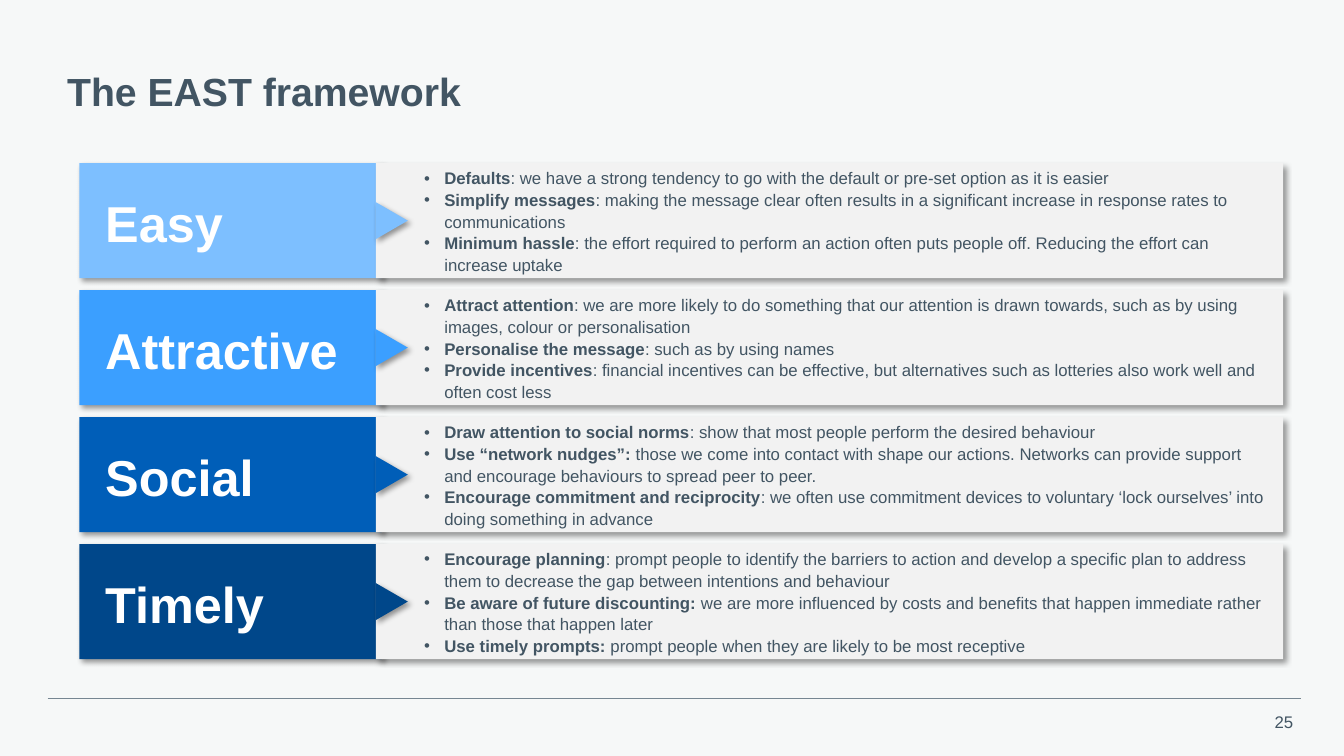
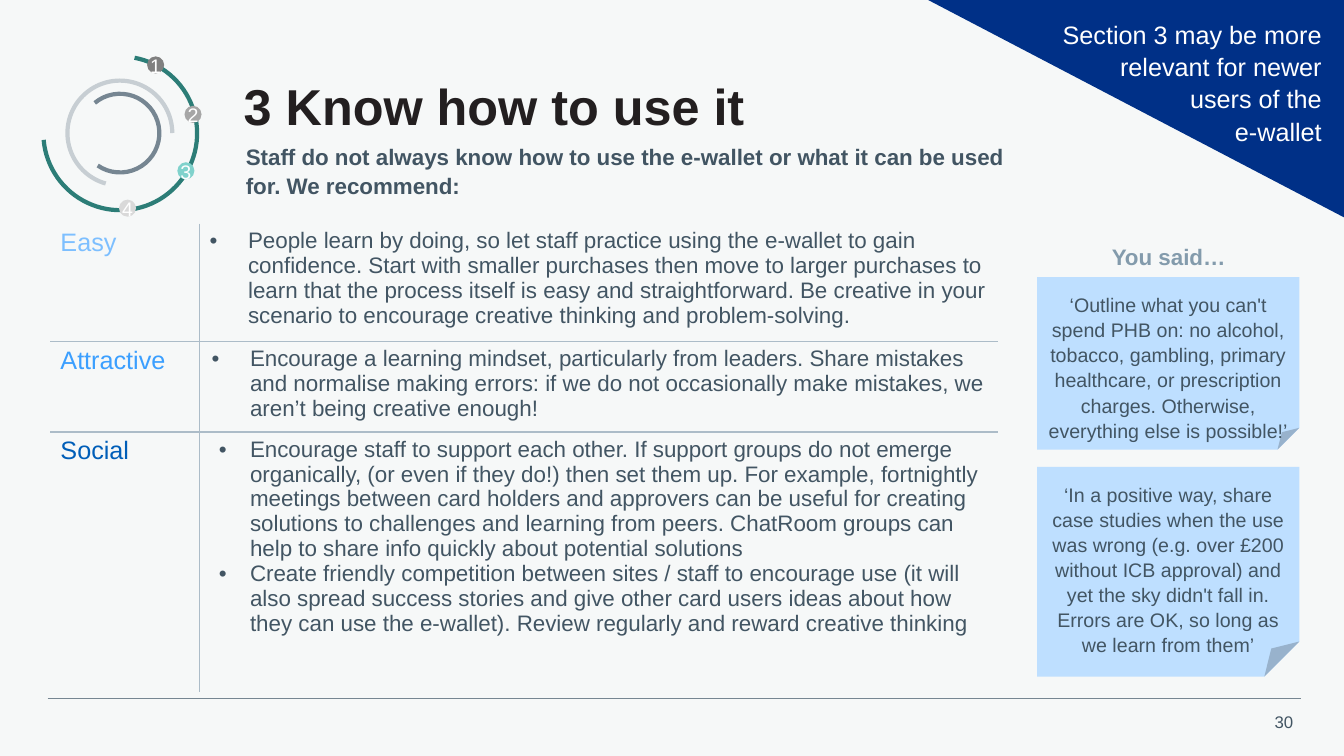
import pptx
import pptx.util
import pptx.dml.color
import pptx.enum.shapes
import pptx.enum.text
import pptx.oxml.ns
import lxml.etree

Pt = pptx.util.Pt
SHAPE = pptx.enum.shapes.MSO_SHAPE
ALIGN = pptx.enum.text.PP_ALIGN
ANCHOR = pptx.enum.text.MSO_ANCHOR
qn = pptx.oxml.ns.qn


class Theme:
    font = "Arial"
    page = "F6F8F8"
    ink = "425563"
    heading = "231F20"
    muted = "839BAC"
    rule = "768692"
    grid = "ACBCC8"
    panel = "F2F2F2"
    note = "BEDFFF"
    banner = "003087"
    white = "FFFFFF"
    east = {"Easy": "7DBFFF", "Attractive": "3B9FFF", "Social": "005EB8", "Timely": "00478A"}
    display, title, label, body, note_size, small = 36, 28, 18, 16, 14, 12
    leading = 1.07


FRAMEWORK = [
    ("Easy", [
        ("Defaults", ": we have a strong tendency to go with the default or pre-set option as it is easier"),
        ("Simplify messages", ": making the message clear often results in a significant increase in response rates to communications"),
        ("Minimum hassle", ": the effort required to perform an action often puts people off. Reducing the effort can increase uptake"),
    ]),
    ("Attractive", [
        ("Attract attention", ": we are more likely to do something that our attention is drawn towards, such as by using images, colour or personalisation"),
        ("Personalise the message", ": such as by using names"),
        ("Provide incentives", ": financial incentives can be effective, but alternatives such as lotteries also work well and often cost less"),
    ]),
    ("Social", [
        ("Draw attention to social norms", ": show that most people perform the desired behaviour"),
        ("Use “network nudges”: ", "those we come into contact with shape our actions. Networks can provide support and encourage behaviours to spread peer to peer."),
        ("Encourage commitment and reciprocity", ": we often use commitment devices to voluntary ‘lock ourselves’ into doing something in advance"),
    ]),
    ("Timely", [
        ("Encourage planning", ": prompt people to identify the barriers to action and develop a specific plan to address them to decrease the gap between intentions and behaviour"),
        ("Be aware of future discounting: ", "we are more influenced by costs and benefits that happen immediate rather than those that happen later"),
        ("Use timely prompts: ", "prompt people when they are likely to be most receptive"),
    ]),
]

ADVICE = [
    ("Easy", 84, (27.4, -27.4), [
        "People learn by doing, so let staff practice using the e-wallet to gain confidence. Start with smaller purchases then move to larger purchases to learn that the process itself is easy and straightforward. Be creative in your scenario to encourage creative thinking and problem-solving.",
    ]),
    ("Attractive", 64.5, (28.8, -27.4), [
        "Encourage a learning mindset, particularly from leaders. Share mistakes and normalise making errors: if we do not occasionally make mistakes, we aren’t being creative enough!",
    ]),
    ("Social", 185.5, (28.8, -22.3), [
        "Encourage staff to support each other. If support groups do not emerge organically, (or even if they do!) then set them up. For example, fortnightly meetings between card holders and approvers can be useful for creating solutions to challenges and learning from peers. ChatRoom groups can help to share info quickly about potential solutions",
        "Create friendly competition between sites / staff to encourage use (it will also spread success stories and give other card users ideas about how they can use the e-wallet). Review regularly and reward creative thinking",
    ]),
]

QUOTES = [
    (198, 123.1, 12600, "‘Outline what you can't spend PHB on: no alcohol, tobacco, gambling, primary healthcare, or prescription charges. Otherwise, everything else is possible!’"),
    (333.4, 149.8, 16667, "‘In a positive way, share case studies when the use was wrong (e.g. over £200 without ICB approval) and yet the sky didn't fall in. Errors are OK, so long as we learn from them’"),
]

BANNER = ["Section 3 may be more relevant for newer", "users of the", "e-wallet"]

DIAL_ARCS = [
    (48.2, 57.6, 74.9, 0, "C7CED3"),
    (57.6, 67, 56.2, 124.5, "768692"),
    (31, 40.3, 109.8, 175.1, "2C7D77"),
]
DIAL_STEPS = [
    (105.1, 40.3, "808080"),
    (131.8, 75.6, "A6A6A6"),
    (126.7, 115.9, "80D2CC"),
    (85, 142.6, "D9D9D9"),
]


def rgb(value):
    return pptx.dml.color.RGBColor.from_string(value)


def add_xml(parent, tag, **attributes):
    return lxml.etree.SubElement(parent, qn(tag), attributes)


def add_bullet(para, indent):
    properties = para._p.get_or_add_pPr()
    left, hanging = indent
    properties.set("marL", str(int(Pt(left))))
    properties.set("indent", str(int(Pt(hanging))))
    add_xml(properties, "a:buFont", typeface=Theme.font)
    add_xml(properties, "a:buChar", char="•")


def write(frame, lines, size, color=Theme.ink, bold=False, align=ALIGN.LEFT,
          indent=None, leading=Theme.leading):
    for index, line in enumerate(lines):
        para = frame.add_paragraph() if index else frame.paragraphs[0]
        para.alignment = align
        if leading:
            para.line_spacing = leading
        if indent:
            add_bullet(para, indent)
        spans = [(line, bold)] if isinstance(line, str) else [(line[0], True), (line[1], False)]
        for text, heavy in spans:
            span = para.add_run()
            span.text = text
            span.font.name = Theme.font
            span.font.size = Pt(size)
            span.font.bold = heavy
            span.font.color.rgb = rgb(color)


def add_text(page, at, lines, size, anchor=ANCHOR.TOP, margin=None, wrap=True, **style):
    box = page.shapes.add_textbox(*map(Pt, at))
    frame = box.text_frame
    frame.word_wrap = wrap
    frame.vertical_anchor = anchor
    if margin is not None:
        frame.margin_left = frame.margin_right = frame.margin_top = frame.margin_bottom = Pt(margin)
    write(frame, lines, size, **style)


def add_block(page, kind, at, fill, rotation=0, shadow=False):
    block = page.shapes.add_shape(kind, *map(Pt, at))
    block.rotation = rotation
    block.shadow.inherit = False
    block.fill.solid()
    block.fill.fore_color.rgb = rgb(fill)
    block.line.fill.background()
    if shadow:
        effects = block._element.spPr.find(qn("a:effectLst"))
        outer = add_xml(effects, "a:outerShdw", blurRad=str(Pt(4)), dist=str(Pt(3)),
                        dir="2700000", algn="tl", rotWithShape="0")
        add_xml(add_xml(outer, "a:srgbClr", val="000000"), "a:alpha", val="40000")
    return block


def new_page(deck, number):
    page = deck.slides.add_slide(deck.slide_layouts[6])
    page.background.fill.solid()
    page.background.fill.fore_color.rgb = rgb(Theme.page)
    add_text(page, (901.4, 504, 29.5, 21.6), [number], Theme.small, align=ALIGN.RIGHT, wrap=False)
    line = page.shapes.add_connector(pptx.enum.shapes.MSO_CONNECTOR.STRAIGHT,
                                     Pt(34), Pt(499), Pt(929.5), Pt(499))
    line.line.color.rgb = rgb(Theme.rule)
    line.line.width = Pt(0.5)
    add_xml(line._element.spPr, "a:effectLst")
    return page


def build_framework(deck):
    page = new_page(deck, "25")
    add_text(page, (48, 43.2, 690, 48.2), ["The EAST framework"], Theme.title,
             anchor=ANCHOR.MIDDLE, margin=0, bold=True, leading=0.9)
    top, pitch, height = 116.6, 90.7, 82.1
    arrow_width, arrow_height = 26.6, 23
    for row, (name, points) in enumerate(FRAMEWORK):
        y = top + row * pitch
        color = Theme.east[name]
        label = add_block(page, SHAPE.RECTANGLE, (56.7, y, 216, height), color, shadow=True)
        label.text_frame.margin_left = Pt(18.5)
        label.text_frame.vertical_anchor = ANCHOR.MIDDLE
        write(label.text_frame, [name], Theme.display, Theme.white, bold=True)
        panel = add_block(page, SHAPE.RECTANGLE, (268.5, y, 648, height), Theme.panel, shadow=True)
        panel.text_frame.vertical_anchor = ANCHOR.MIDDLE
        write(panel.text_frame, points, Theme.small, indent=(41.8, -14.4))
        add_block(page, SHAPE.ISOSCELES_TRIANGLE,
                  (266.5, y + (height - arrow_height) / 2, arrow_width, arrow_height),
                  color, rotation=90, shadow=True)


def set_borders(cell, sides):
    properties = cell._tc.get_or_add_tcPr()
    for index, side in enumerate(("L", "R", "T", "B")):
        visible = side in sides
        line = lxml.etree.Element(qn("a:ln" + side), {"w": str(Pt(1) if visible else 0)})
        if visible:
            add_xml(add_xml(line, "a:solidFill"), "a:srgbClr", val=Theme.grid)
        else:
            add_xml(line, "a:noFill")
        properties.insert(index, line)


def add_advice(page):
    columns = (106.6, 570.2)
    total = sum(height for _, height, _, _ in ADVICE)
    table = page.shapes.add_table(len(ADVICE), 2, Pt(36), Pt(159.8),
                                  Pt(sum(columns)), Pt(total)).table
    table.first_row = table.horz_banding = False
    for column, width in zip(table.columns, columns):
        column.width = Pt(width)
    for row, (name, height, indent, points) in enumerate(ADVICE):
        table.rows[row].height = Pt(height)
        label, advice = table.cell(row, 0), table.cell(row, 1)
        write(label.text_frame, [name], Theme.label, Theme.east[name], leading=None)
        write(advice.text_frame, points, Theme.body, indent=indent, leading=None)
        across = ("T" if row else "") + ("B" if row < len(ADVICE) - 1 else "")
        for cell, side in ((label, "R"), (advice, "L")):
            cell.fill.background()
            set_borders(cell, side + across)


def add_dial(page):
    for x, y, size, rotation, color in DIAL_ARCS:
        arc = add_block(page, SHAPE.ARC, (x, y, size, size), color, rotation)
        arc.fill.background()
        arc.adjustments[0] = 63.376
        arc.adjustments[1] = 0
        arc.line.color.rgb = rgb(color)
        arc.line.width = Pt(3)
    for number, (x, y, color) in enumerate(DIAL_STEPS, 1):
        step = add_block(page, SHAPE.OVAL, (x, y, 12.2, 12.2), color)
        frame = step.text_frame
        frame.word_wrap = False
        frame.margin_left = frame.margin_right = frame.margin_top = frame.margin_bottom = 0
        frame.vertical_anchor = ANCHOR.MIDDLE
        write(frame, [str(number)], Theme.note_size, Theme.white, align=ALIGN.CENTER)


def build_advice(deck):
    page = new_page(deck, "30")
    add_text(page, (167, 46.8, 625, 51.1), ["3 Know how to use it"], Theme.display,
             color=Theme.heading, bold=True)
    add_text(page, (168.5, 97.2, 578.2, 65.5),
             ["Staff do not always know how to use the e-wallet or what it can be used for. We recommend:"],
             Theme.body, bold=True)
    add_text(page, (756.7, 168.5, 156.2, 27.4), ["You said…"], Theme.body,
             color=Theme.muted, bold=True, align=ALIGN.CENTER)
    for y, height, fold, quote in QUOTES:
        note = add_block(page, SHAPE.FOLDED_CORNER, (740.9, y, 187.2, height), Theme.note)
        geometry = note._element.spPr.find(qn("a:prstGeom"))
        add_xml(geometry.find(qn("a:avLst")), "a:gd", name="adj", fmla=f"val {fold}")
        frame = note.text_frame
        frame.margin_top, frame.margin_bottom = Pt(10), 0
        frame.vertical_anchor = ANCHOR.TOP
        write(frame, [quote], Theme.note_size, align=ALIGN.CENTER)
    add_advice(page)
    add_dial(page)
    add_block(page, SHAPE.RIGHT_TRIANGLE, (661.7, -0.7, 298.8, 156.2), Theme.banner, rotation=180)
    add_text(page, (747.4, 8.6, 203.8, 94.3), BANNER, Theme.label,
             color=Theme.white, align=ALIGN.RIGHT)


def main():
    deck = pptx.Presentation()
    deck.slide_width, deck.slide_height = Pt(960), Pt(540)
    build_framework(deck)
    build_advice(deck)
    deck.save("out.pptx")


if __name__ == "__main__":
    main()
